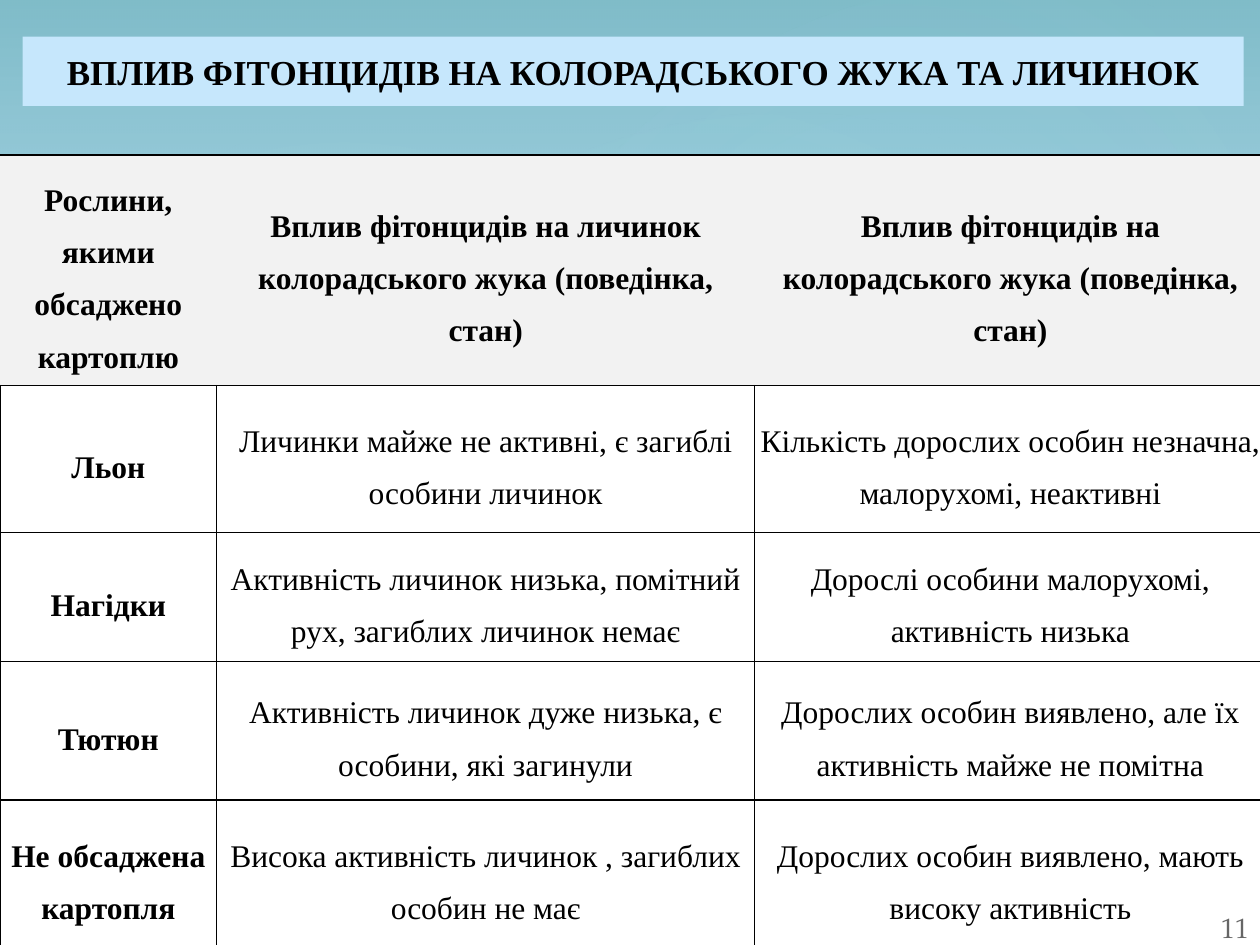
from dataclasses import dataclass

from pptx import Presentation
from pptx.dml.color import RGBColor
from pptx.enum.shapes import MSO_SHAPE
from pptx.enum.text import MSO_ANCHOR, PP_ALIGN
from pptx.oxml import parse_xml
from pptx.oxml.ns import nsdecls, qn
from pptx.util import Inches, Pt

SERIF = "Times New Roman"
BLACK, SKY, WHITE, GREY = "000000", "C6E7FC", "FFFFFF", "F2F2F2"
LINEAR = '<a:lin ang="5400000" scaled="0"/>'
RADIAL = ('<a:path path="circle"><a:fillToRect l="50000" t="50000" '
          'r="50000" b="50000"/></a:path>')


@dataclass
class Wash:
    """A translucent gradient area: stops are (percent, colour, opacity)."""
    left: float
    top: float
    width: float
    height: float
    rotation: float
    shape: MSO_SHAPE
    direction: str
    stops: list


def glow(left: float, top: float, width: float, height: float,
         rotation: float, opacity: int) -> Wash:
    stops = [(0, "5AFBF8", opacity), (58, SKY, 0)]
    return Wash(left, top, width, height, rotation, MSO_SHAPE.OVAL, RADIAL, stops)


WASHES = [
    Wash(0, 0, 10, 7.5, 0, MSO_SHAPE.RECTANGLE, LINEAR,
         [(0, "03706E", 36), (100, SKY, 10)]),
    glow(1.5, 1.14, 7.92, 6.24, 328.7, 7),
    glow(-0.3, 1.28, 6.06, 4.9, 294.3, 8),
    glow(3.58, 0.13, 7.09, 5.2, 328.7, 8),
]

COLUMNS = [1.72, 4.27, 4.06]
ROWS = [1.83, 1.17, 1.02, 1.1, 1.18]
CELLS = [
    ["Рослини, якими обсаджено картоплю",
     "Вплив фітонцидів на личинок колорадського жука (поведінка, стан)",
     "Вплив фітонцидів на колорадського жука (поведінка, стан)"],
    ["Льон",
     "Личинки майже не активні, є загиблі особини личинок",
     "Кількість дорослих особин незначна, малорухомі, неактивні"],
    ["Нагідки",
     "Активність личинок низька, помітний рух, загиблих личинок немає",
     "Дорослі особини малорухомі, активність низька"],
    ["Тютюн",
     "Активність личинок дуже низька, є особини, які загинули",
     "Дорослих особин виявлено, але їх активність майже не помітна"],
    ["Не обсаджена картопля",
     "Висока активність личинок , загиблих особин не має",
     "Дорослих особин виявлено, мають високу активність"],
]


def rgb(colour: str) -> RGBColor:
    return RGBColor.from_string(colour)


def write(frame, text: str, size: float, align, font: str = SERIF,
          bold: bool = False, colour: str = BLACK):
    """Put one paragraph of evenly formatted text into a frame."""
    frame.word_wrap = True
    para = frame.paragraphs[0]
    para.text = text
    para.alignment = align
    para.font.name = font
    para.font.size = Pt(size)
    para.font.bold = bold
    para.font.color.rgb = rgb(colour)
    return para


def draw_wash(page, wash: Wash) -> None:
    shape = page.shapes.add_shape(
        wash.shape, Inches(wash.left), Inches(wash.top),
        Inches(wash.width), Inches(wash.height))
    shape.rotation = wash.rotation
    shape.shadow.inherit = False
    shape.line.fill.background()
    shape.fill.gradient()
    stops = "".join(
        f'<a:gs pos="{place * 1000}"><a:srgbClr val="{colour}">'
        f'<a:alpha val="{opacity * 1000}"/></a:srgbClr></a:gs>'
        for place, colour, opacity in wash.stops)
    properties = shape._element.spPr
    properties.replace(properties.find(qn("a:gradFill")), parse_xml(
        f'<a:gradFill {nsdecls("a")} rotWithShape="1">'
        f'<a:gsLst>{stops}</a:gsLst>{wash.direction}</a:gradFill>'))


def set_borders(cell, sides: str, width: float = 0.75) -> None:
    """Rule the given sides (of L, R, T, B) in black and clear the others."""
    properties = cell._tc.get_or_add_tcPr()
    for side in "LRTB":
        paint = (f'<a:solidFill><a:srgbClr val="{BLACK}"/></a:solidFill>'
                 if side in sides else "<a:noFill/>")
        properties.append(parse_xml(
            f'<a:ln{side} {nsdecls("a")} w="{Pt(width)}">{paint}</a:ln{side}>'))


def draw_table(page) -> None:
    table = page.shapes.add_table(
        len(ROWS), len(COLUMNS), 0, Inches(1.23),
        Inches(sum(COLUMNS)), Inches(sum(ROWS))).table
    table.first_row = table.horz_banding = False
    for column, width in zip(table.columns, COLUMNS):
        column.width = Inches(width)
    for row, height in zip(table.rows, ROWS):
        row.height = Inches(height)
    for i, texts in enumerate(CELLS):
        for j, text in enumerate(texts):
            cell = table.cell(i, j)
            header = i == 0
            set_borders(cell, "TB" if header else "LRTB")
            cell.fill.solid()
            cell.fill.fore_color.rgb = rgb(GREY if header else WHITE)
            cell.vertical_anchor = MSO_ANCHOR.MIDDLE
            cell.margin_left = cell.margin_right = Inches(0.04)
            cell.margin_top = cell.margin_bottom = 0
            para = write(cell.text_frame, text, 18, PP_ALIGN.CENTER,
                         bold=header or j == 0)
            para.line_spacing = 1.5


def draw_title(page) -> None:
    title = page.shapes.title
    title.left, title.top = Inches(0.18), Inches(0.29)
    title.width, title.height = Inches(9.69), Inches(0.55)
    title.fill.solid()
    title.fill.fore_color.rgb = rgb(SKY)
    title.text_frame.vertical_anchor = MSO_ANCHOR.MIDDLE
    write(title.text_frame, "ВПЛИВ ФІТОНЦИДІВ НА КОЛОРАДСЬКОГО ЖУКА ТА ЛИЧИНОК",
          20, PP_ALIGN.CENTER, bold=True)
    # Bring the title in front of the washes
    page.shapes._spTree.append(title._element)


def draw_page_number(page) -> None:
    box = page.shapes.add_textbox(
        Inches(7.68), Inches(7.17), Inches(2.33), Inches(0.33))
    frame = box.text_frame
    frame.vertical_anchor = MSO_ANCHOR.BOTTOM
    frame.margin_bottom = Inches(0.01)
    write(frame, "11", 16, PP_ALIGN.RIGHT, "TeX Gyre Pagella", colour="666666")


def main() -> None:
    deck = Presentation()
    deck.slide_width, deck.slide_height = Inches(10), Inches(7.5)
    page = deck.slides.add_slide(deck.slide_layouts[5])

    # Background
    page.background.fill.solid()
    page.background.fill.fore_color.rgb = rgb(SKY)
    for wash in WASHES:
        draw_wash(page, wash)

    # Content
    draw_title(page)
    draw_table(page)
    draw_page_number(page)
    deck.save("out.pptx")


if __name__ == "__main__":
    main()
